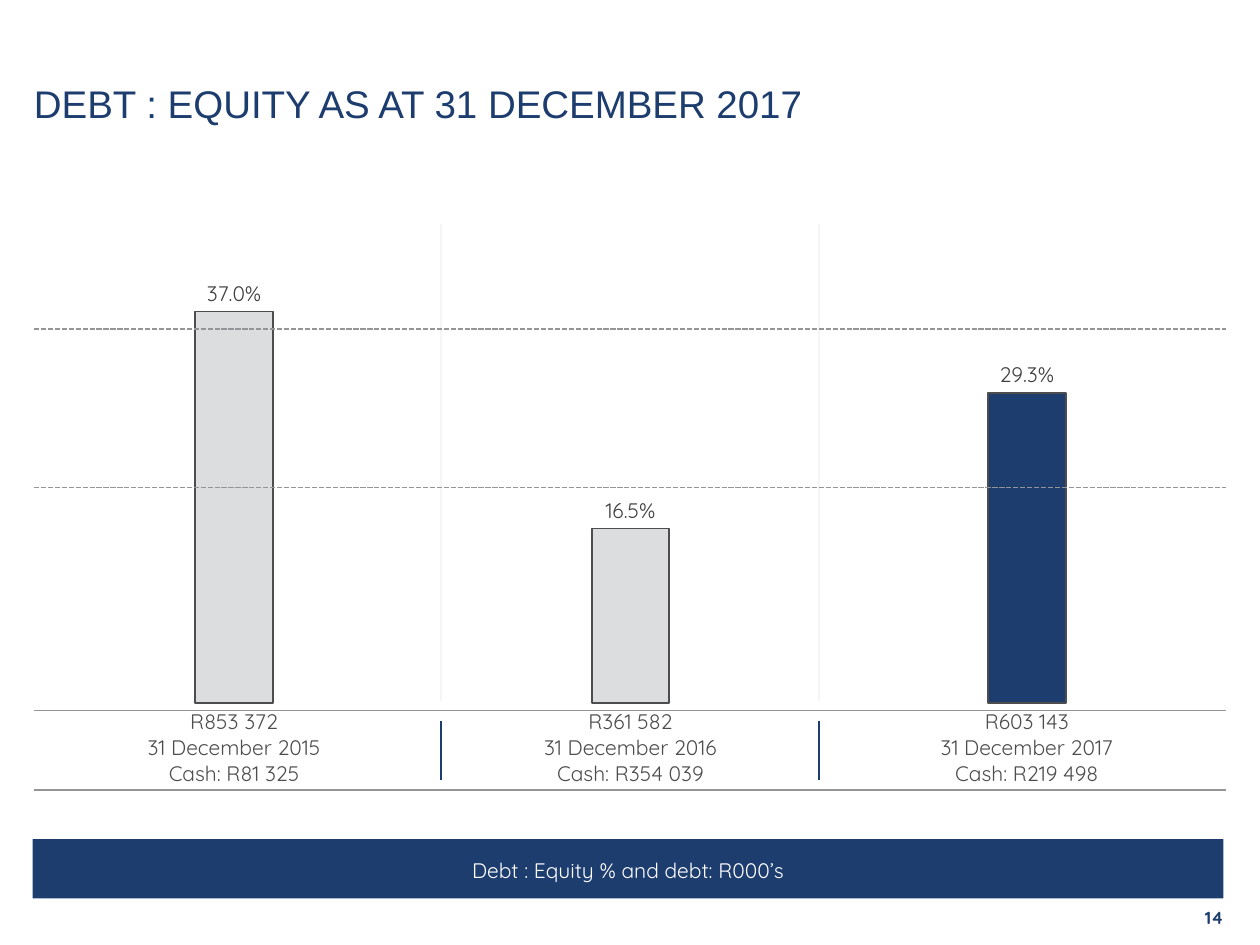
"""Build the debt to equity slide with its column chart."""
from lxml import etree
from pptx import Presentation
from pptx.chart.data import CategoryChartData
from pptx.dml.color import RGBColor
from pptx.enum.chart import XL_CHART_TYPE, XL_LABEL_POSITION, XL_TICK_LABEL_POSITION, XL_TICK_MARK
from pptx.enum.dml import MSO_LINE
from pptx.enum.shapes import MSO_CONNECTOR, MSO_SHAPE
from pptx.enum.text import MSO_ANCHOR, PP_ALIGN
from pptx.oxml import parse_xml
from pptx.oxml.ns import nsdecls, qn
from pptx.util import Inches, Pt

TITLE = "DEBT : EQUITY AS AT 31 DECEMBER 2017"
CAPTION = "Debt : Equity % and debt: R000’s"
PAGE_NUMBER = "14"
YEARS = [
    ("R853 372", "31 December 2015", "Cash: R81 325", 0.37, "silver"),
    ("R361 582", "31 December 2016", "Cash: R354 039", 0.165, "silver"),
    ("R603 143", "31 December 2017", "Cash: R219 498", 0.293, "navy"),
]
COLORS = {"navy": "1D3D6F", "silver": "DCDDDE", "rule": "949599", "pale": "F4F5F5",
          "outline": "4D4D4F", "label": "404040", "black": "000000", "white": "FFFFFF"}
FONT = "Quicksand"
LEFT, RIGHT = 0.27, 9.73
LABEL_RULES = [5.64, 6.27]
DASHED_RULES = [2.61, 3.87]
DIVIDERS = [3.5, 6.5]
DIVIDER_SPANS = [(5.72, 6.19, "navy"), (1.78, 5.56, "pale")]
PLOT_LAYOUT = {"x": 0.017, "y": 0.046, "w": 0.967, "h": 0.694}


def color(name):
    return RGBColor.from_string(COLORS[name])


def style_font(font, size, name, face=FONT, bold=False):
    font.size = Pt(size)
    font.name = face
    font.bold = bold
    font.color.rgb = color(name)


def write(shape, text, anchor, align, size, name, **style):
    frame = shape.text_frame
    frame.word_wrap = True
    frame.vertical_anchor = anchor
    frame.margin_left = frame.margin_right = frame.margin_top = frame.margin_bottom = 0
    paragraph = frame.paragraphs[0]
    paragraph.alignment = align
    run = paragraph.add_run()
    run.text = text
    style_font(run.font, size, name, **style)
    return paragraph


def add_rule(slide, x1, y1, x2, y2, name, width, dash=None):
    rule = slide.shapes.add_connector(
        MSO_CONNECTOR.STRAIGHT, Inches(x1), Inches(y1), Inches(x2), Inches(y2))
    rule.line.color.rgb = color(name)
    rule.line.width = Pt(width)
    if dash:
        rule.line.dash_style = dash
    etree.SubElement(rule._element.spPr, qn("a:effectLst"))


def fix_plot_area(chart):
    plot_area = chart._chartSpace.chart.plotArea
    for layout in plot_area.findall(qn("c:layout")):
        plot_area.remove(layout)
    modes = "".join(f'<c:{key}Mode val="edge"/>' for key in "xy")
    sizes = "".join(f'<c:{key} val="{value}"/>' for key, value in PLOT_LAYOUT.items())
    plot_area.insert(0, parse_xml(
        f'<c:layout {nsdecls("c")}><c:manualLayout><c:layoutTarget val="inner"/>'
        f'{modes}{sizes}</c:manualLayout></c:layout>'))


def add_debt_chart(slide):
    data = CategoryChartData(number_format="0.0%")
    data.categories = ["\n".join(year[:3]) for year in YEARS]
    data.add_series("Series 1", [year[3] for year in YEARS])
    chart = slide.shapes.add_chart(
        XL_CHART_TYPE.COLUMN_CLUSTERED, Inches(0.12), Inches(1.55),
        Inches(9.76), Inches(5.45), data).chart
    chart.has_legend = False
    chart.has_title = False
    style_font(chart.font, 10, "black")
    fix_plot_area(chart)

    for axis in (chart.category_axis, chart.value_axis):
        axis.has_major_gridlines = False
        axis.major_tick_mark = axis.minor_tick_mark = XL_TICK_MARK.NONE
        axis.format.line.fill.background()
        style_font(axis.tick_labels.font, 12, "outline")
    values = chart.value_axis
    values.minimum_scale, values.maximum_scale, values.major_unit = 0, 0.45, 0.05
    values.tick_label_position = XL_TICK_LABEL_POSITION.NONE

    plot = chart.plots[0]
    plot.gap_width = 410
    plot.vary_by_categories = False
    series = plot.series[0]
    series.format.fill.solid()
    series.format.fill.fore_color.rgb = color("navy")
    for index, year in enumerate(YEARS):
        bar = series.points[index].format
        bar.fill.solid()
        bar.fill.fore_color.rgb = color(year[4])
    for bar in [series.format] + [series.points[i].format for i in range(len(YEARS))]:
        bar.line.color.rgb = color("outline")
        bar.line.width = Pt(1)
    labels = series.data_labels
    labels.show_value = True
    labels.number_format = "0.0%"
    labels.number_format_is_linked = False
    labels.position = XL_LABEL_POSITION.OUTSIDE_END
    style_font(labels.font, 12, "label")


def main():
    deck = Presentation()
    deck.slide_width, deck.slide_height = Inches(10), Inches(7.5)
    slide = deck.slides.add_slide(deck.slide_layouts[6])

    number = slide.shapes.add_textbox(Inches(9.24), Inches(7.06), Inches(0.47), Inches(0.44))
    write(number, PAGE_NUMBER, MSO_ANCHOR.MIDDLE, PP_ALIGN.RIGHT, 10, "navy", bold=True)
    title = slide.shapes.add_textbox(Inches(LEFT), Inches(0.13), Inches(8.03), Inches(0.87))
    write(title, TITLE, MSO_ANCHOR.BOTTOM, PP_ALIGN.LEFT, 22, "navy", face="Arial")

    add_debt_chart(slide)

    banner = slide.shapes.add_shape(
        MSO_SHAPE.RECTANGLE, Inches(0.26), Inches(6.66), Inches(9.45), Inches(0.47))
    banner.shadow.inherit = False
    banner.fill.solid()
    banner.fill.fore_color.rgb = color("navy")
    banner.line.fill.background()
    caption = write(banner, CAPTION, MSO_ANCHOR.MIDDLE, PP_ALIGN.CENTER, 12, "white")
    caption.line_spacing = 1.1

    for y in LABEL_RULES:
        add_rule(slide, LEFT, y, RIGHT, y, "rule", 1)
    for top, bottom, name in DIVIDER_SPANS:
        for x in DIVIDERS:
            add_rule(slide, x, top, x, bottom, name, 1.5)
    for y in DASHED_RULES:
        add_rule(slide, LEFT, y, RIGHT, y, "rule", 1, MSO_LINE.SQUARE_DOT)

    deck.save("out.pptx")


if __name__ == "__main__":
    main()
